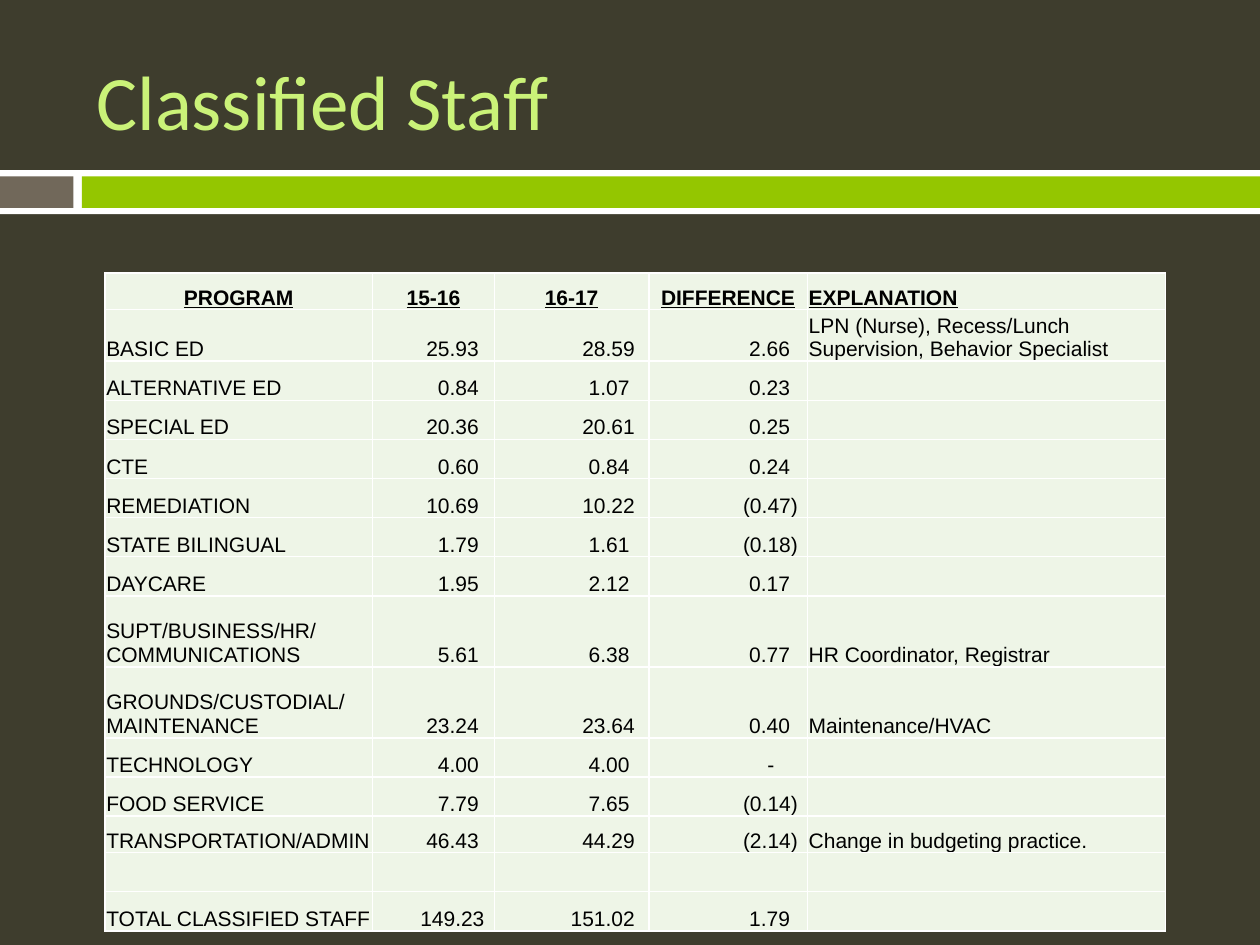
from lxml import etree
from pptx import Presentation
from pptx.dml.color import RGBColor
from pptx.enum.shapes import MSO_SHAPE
from pptx.enum.text import MSO_ANCHOR, PP_ALIGN
from pptx.oxml.ns import qn
from pptx.util import Pt

RECTANGLE = MSO_SHAPE.RECTANGLE
MIDDLE, BOTTOM = MSO_ANCHOR.MIDDLE, MSO_ANCHOR.BOTTOM
LEFT, CENTER, RIGHT = PP_ALIGN.LEFT, PP_ALIGN.CENTER, PP_ALIGN.RIGHT

DARK = RGBColor(0x3E, 0x3D, 0x2D)
WHITE = RGBColor(0xFF, 0xFF, 0xFF)
BLACK = RGBColor(0, 0, 0)
TAUPE = RGBColor(0x71, 0x68, 0x5A)
GREEN = RGBColor(0x94, 0xC6, 0x00)
LIME = RGBColor(0xCA, 0xF2, 0x78)
PALE = RGBColor(0xEE, 0xF5, 0xE7)

COLUMN_WIDTHS = [152.9, 69.7, 88.2, 90.7, 204.5]
ROW_HEIGHT, TALL_ROW_HEIGHT = 20.9, 40.6
TALL_PROGRAMS = ("SUPT/BUSINESS/HR/COMMUNICATIONS", "GROUNDS/CUSTODIAL/MAINTENANCE")
CELL_INSET = 0.72

STAFF = [
    ("PROGRAM", "15-16", "16-17", "DIFFERENCE", "EXPLANATION"),
    ("BASIC ED", "25.93", "28.59", "2.66",
     "LPN (Nurse), Recess/Lunch Supervision, Behavior Specialist"),
    ("ALTERNATIVE ED", "0.84", "1.07", "0.23", ""),
    ("SPECIAL ED", "20.36", "20.61", "0.25", ""),
    ("CTE", "0.60", "0.84", "0.24", ""),
    ("REMEDIATION", "10.69", "10.22", "(0.47)", ""),
    ("STATE BILINGUAL", "1.79", "1.61", "(0.18)", ""),
    ("DAYCARE", "1.95", "2.12", "0.17", ""),
    ("SUPT/BUSINESS/HR/COMMUNICATIONS", "5.61", "6.38", "0.77",
     "HR Coordinator, Registrar"),
    ("GROUNDS/CUSTODIAL/MAINTENANCE", "23.24", "23.64", "0.40", "Maintenance/HVAC"),
    ("TECHNOLOGY", "4.00", "4.00", "-", ""),
    ("FOOD SERVICE", "7.79", "7.65", "(0.14)", ""),
    ("TRANSPORTATION/ADMIN", "46.43", "44.29", "(2.14)", "Change in budgeting practice."),
    ("", "", "", "", ""),
    ("TOTAL CLASSIFIED STAFF", "149.23", "151.02", "1.79", ""),
]


def write_text(frame, text, size=12, font="Arial", color=BLACK, align=LEFT,
               bold=False, underline=False):
    """Write one formatted paragraph into a text frame."""
    frame.word_wrap = True
    para = frame.paragraphs[0]
    para.alignment = align
    span = para.add_run()
    span.text = text
    span.font.size = Pt(size)
    span.font.name = font
    span.font.color.rgb = color
    span.font.bold = bold
    span.font.underline = underline


def add_bar(page, left, top, width, height, color):
    """Add a plain filled rectangle."""
    bar = page.shapes.add_shape(RECTANGLE, Pt(left), Pt(top), Pt(width), Pt(height))
    bar.shadow.inherit = False
    bar.fill.solid()
    bar.fill.fore_color.rgb = color
    bar.line.fill.background()


def add_title(page, left, top, width, height):
    """Add the slide title."""
    box = page.shapes.add_textbox(Pt(left), Pt(top), Pt(width), Pt(height))
    box.text_frame.vertical_anchor = MIDDLE
    write_text(box.text_frame, "Classified Staff", size=44, font="Calibri", color=LIME)


def add_band(page, left, top, width, height):
    """Add the white band with its short and long coloured bars."""
    edge, short, long_start = 3.6, 42, 46.8
    add_bar(page, left, top, width, height, WHITE)
    inner_top, inner_height = top + edge, height - 2 * edge
    add_bar(page, left, inner_top, short, inner_height, TAUPE)
    add_bar(page, left + long_start, inner_top, width - long_start, inner_height, GREEN)


def right_inset(column, value):
    """Return the right inset that lines up a number in its column."""
    if column == 1:
        return 5.7 if len(value) > 5 else 9
    if column == 2:
        return 11 if len(value) < 5 else 8
    if value == "-":
        return 19
    return 5.5 if value.startswith("(") else 10


def style_cell(cell):
    """Give a cell white borders, a pale fill and tight insets."""
    properties = cell._tc.get_or_add_tcPr()
    for side in ("lnL", "lnR", "lnT", "lnB"):
        line = etree.SubElement(properties, qn(f"a:{side}"), w=str(Pt(1)))
        fill = etree.SubElement(line, qn("a:solidFill"))
        etree.SubElement(fill, qn("a:srgbClr"), val=str(WHITE))
    cell.fill.solid()
    cell.fill.fore_color.rgb = PALE
    cell.vertical_anchor = BOTTOM
    cell.margin_left = cell.margin_right = cell.margin_top = Pt(CELL_INSET)
    cell.margin_bottom = 0


def add_staff_table(page, left, top):
    """Add the staffing table with its header, programs and total."""
    heights = [TALL_ROW_HEIGHT if row[0] in TALL_PROGRAMS else ROW_HEIGHT for row in STAFF]
    frame = page.shapes.add_table(len(STAFF), len(COLUMN_WIDTHS), Pt(left), Pt(top),
                                  Pt(sum(COLUMN_WIDTHS)), Pt(sum(heights)))
    table = frame.table
    table.first_row = table.horz_banding = False
    for column, width in zip(table.columns, COLUMN_WIDTHS):
        column.width = Pt(width)
    for index, (values, height) in enumerate(zip(STAFF, heights)):
        table.rows[index].height = Pt(height)
        header = index == 0
        for column, value in enumerate(values):
            cell = table.cell(index, column)
            style_cell(cell)
            align = LEFT
            if header and column < 4:
                align = CENTER
            elif value and 0 < column < 4:
                align = RIGHT
                cell.margin_right = Pt(right_inset(column, value))
            write_text(cell.text_frame, value, align=align, bold=header, underline=header)


def main():
    """Build and save the deck."""
    deck = Presentation()
    deck.slide_width, deck.slide_height = Pt(720), Pt(540)
    page = deck.slides.add_slide(deck.slide_layouts[6])
    page.background.fill.solid()
    page.background.fill.fore_color.rgb = DARK
    add_band(page, 0, 97.2, 720, 25.2)
    add_title(page, 48, 18, 642, 78)
    add_staff_table(page, 60, 156)
    deck.save("out.pptx")


if __name__ == "__main__":
    main()
